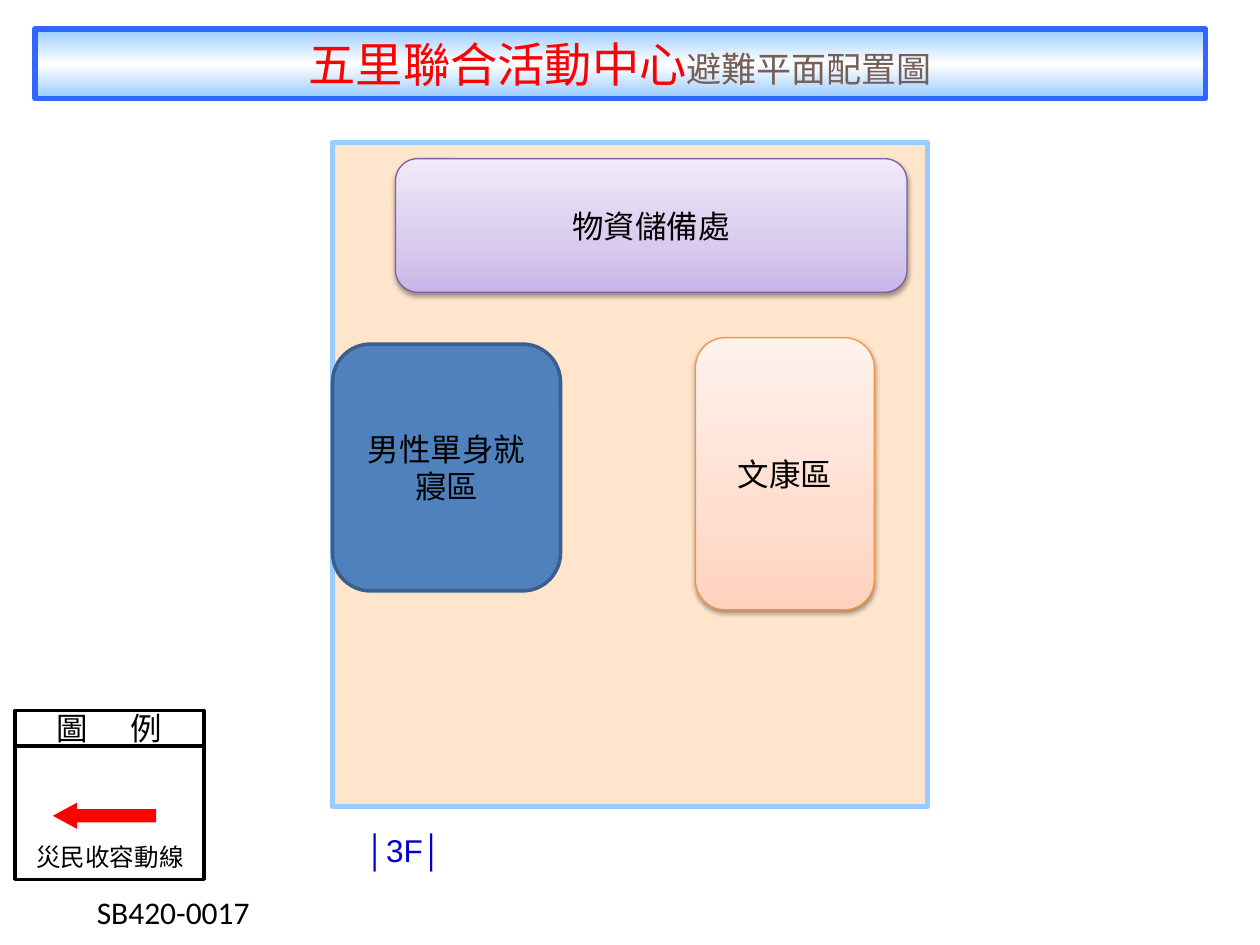
from lxml import etree
from pptx import Presentation
from pptx.dml.color import RGBColor
from pptx.enum.shapes import MSO_SHAPE
from pptx.enum.text import MSO_ANCHOR, MSO_AUTO_SIZE, PP_ALIGN
from pptx.oxml.ns import qn
from pptx.util import Pt

RECT, ROUND, ARROW = MSO_SHAPE.RECTANGLE, MSO_SHAPE.ROUNDED_RECTANGLE, MSO_SHAPE.RIGHT_ARROW
LEFT, MID = PP_ALIGN.LEFT, PP_ALIGN.CENTER
TOP, CENTER = MSO_ANCHOR.TOP, MSO_ANCHOR.MIDDLE
FIXED = MSO_AUTO_SIZE.NONE

BLACK = RGBColor(0x00, 0x00, 0x00)
WHITE = RGBColor(0xFF, 0xFF, 0xFF)
RED = RGBColor(0xFF, 0x00, 0x00)
BROWN = RGBColor(0x77, 0x5F, 0x55)
NAVY = RGBColor(0x00, 0x00, 0xCC)
SKY = RGBColor(0x99, 0xCC, 0xFF)
BLUE = RGBColor(0x33, 0x66, 0xFF)
PEACH = RGBColor(0xFF, 0xCC, 0x99)
STEEL = RGBColor(0x4F, 0x81, 0xBD)
SLATE = RGBColor(0x3A, 0x5F, 0x8C)
PURPLE = RGBColor(0x7D, 0x60, 0xA0)
ORANGE = RGBColor(0xF6, 0x92, 0x40)
GLOSS = [(0, SKY), (50, WHITE), (100, SKY)]
LILAC = [(0, RGBColor(0xC9, 0xB5, 0xE8)), (35, RGBColor(0xD8, 0xCB, 0xEE)),
         (100, RGBColor(0xF0, 0xEA, 0xF9))]
CORAL = [(0, RGBColor(0xFF, 0xD2, 0xBD)), (35, RGBColor(0xFF, 0xDE, 0xD0)),
         (100, RGBColor(0xFF, 0xF2, 0xED))]


def write(shape, text, size=18, color=BLACK, font="Calibri", align=MID,
          anchor=CENTER, wrap=True):
    """Append a formatted run to the first paragraph of a shape."""
    frame = shape.text_frame
    frame.auto_size = FIXED
    frame.word_wrap = wrap
    frame.vertical_anchor = anchor
    para = frame.paragraphs[0]
    para.alignment = align
    run = para.add_run()
    run.text = text
    run.font.size = Pt(size)
    run.font.name = font
    run.font.color.rgb = color


def blend(shape, stops):
    """Fill a shape with an upward gradient."""
    shape.fill.gradient()
    shape.fill.gradient_angle = 90
    items = shape._element.spPr.find(".//" + qn("a:gsLst"))
    items.clear()
    for pos, color in stops:
        stop = etree.SubElement(items, qn("a:gs"), pos=str(pos * 1000))
        etree.SubElement(stop, qn("a:srgbClr"), val=str(color))


def paint(shape, fill=None, line=None, width=2):
    """Set the fill and outline of a shape."""
    if isinstance(fill, list):
        blend(shape, fill)
    elif fill is None:
        shape.fill.background()
    else:
        shape.fill.solid()
        shape.fill.fore_color.rgb = fill
    if line is None:
        shape.line.fill.background()
    else:
        shape.line.color.rgb = line
        shape.line.width = Pt(width)


def place(shape, box):
    """Move and size a shape."""
    shape.left, shape.top, shape.width, shape.height = map(Pt, box)


def block(shapes, kind, box, fill=None, line=None, width=2):
    """Add a painted preset shape without a shadow."""
    shape = shapes.add_shape(kind, *map(Pt, box))
    shape.shadow.inherit = False
    paint(shape, fill, line, width)
    return shape


def shade(shape):
    """Give a shape a soft shadow below it."""
    effects = shape._element.spPr.find(qn("a:effectLst"))
    cast = etree.SubElement(effects, qn("a:outerShdw"), blurRad=str(Pt(3.1)),
                            dist=str(Pt(1.6)), dir="5400000", rotWithShape="0")
    color = etree.SubElement(cast, qn("a:srgbClr"), val=str(BLACK))
    etree.SubElement(color, qn("a:alpha"), val="38000")


def head(slide):
    """Turn the title placeholder into a rounded banner."""
    title = slide.shapes.title
    place(title, (20, 16.6, 669, 39.6))
    form = etree.Element(qn("a:prstGeom"), prst="roundRect")
    etree.SubElement(form, qn("a:avLst"))
    title._element.spPr.find(qn("a:xfrm")).addnext(form)
    paint(title, GLOSS, BLUE, 3)
    write(title, "五里聯合活動中心", size=27, color=RED, font="Noto Sans CJK SC")
    write(title, "避難平面配置圖", size=20, color=BROWN, font="Arial")


def plan(shapes):
    """Draw the floor and its rooms."""
    floor = block(shapes, RECT, (190, 81.4, 340, 379.4), PEACH, SKY, 3)
    color = floor._element.spPr.find(qn("a:solidFill"))[0]
    etree.SubElement(color, qn("a:alpha"), val="50000")
    rooms = [
        ("物資儲備處", (226, 90.7, 292.3, 76.3), LILAC, PURPLE, 0.75),
        ("文康區", (397.4, 193, 102.2, 155.5), CORAL, ORANGE, 0.75),
        ("男性單身就寢區", (190, 196.6, 130.3, 141.1), STEEL, SLATE, 2),
    ]
    for name, box, fill, line, width in rooms:
        room = block(shapes, ROUND, box, fill, line, width)
        write(room, name)
        if isinstance(fill, list):
            shade(room)
    level = block(shapes, RECT, (175.7, 471, 111, 28.8), WHITE)
    write(level, "│3F│", color=NAVY, font="Arial")


def legend(shapes):
    """Draw the grouped legend."""
    parts = shapes.add_group_shape().shapes
    top = block(parts, RECT, (8.6, 406, 108, 20.2), line=BLACK)
    top.text_frame.margin_left = Pt(24)
    top.text_frame.margin_right = 0
    props = top.text_frame.paragraphs[0]._p.get_or_add_pPr()
    tabs = etree.SubElement(props, qn("a:tabLst"))
    etree.SubElement(tabs, qn("a:tab"), pos=str(Pt(42)), algn="l")
    write(top, "圖\t例", align=LEFT)
    block(parts, RECT, (8.6, 426.2, 108, 76.3), line=BLACK)
    arrow = block(parts, ARROW, (30.2, 458.6, 59, 15.1), RED)
    arrow.adjustments[0] = 0.5
    arrow.adjustments[1] = 0.92
    arrow.rotation = 180
    label = parts.add_textbox(*map(Pt, (13.7, 477.4, 98.6, 20.2)))
    write(label, "災民收容動線", size=14, align=LEFT, anchor=TOP, wrap=False)


def main():
    """Build and save the slide."""
    deck = Presentation()
    deck.slide_width, deck.slide_height = Pt(720), Pt(540)
    slide = deck.slides.add_slide(deck.slide_layouts[5])
    head(slide)
    plan(slide.shapes)
    legend(slide.shapes)
    code = slide.shapes.add_textbox(*map(Pt, (0, 507, 198, 28.8)))
    write(code, "SB420-0017", anchor=TOP)
    deck.save("out.pptx")


if __name__ == "__main__":
    main()
